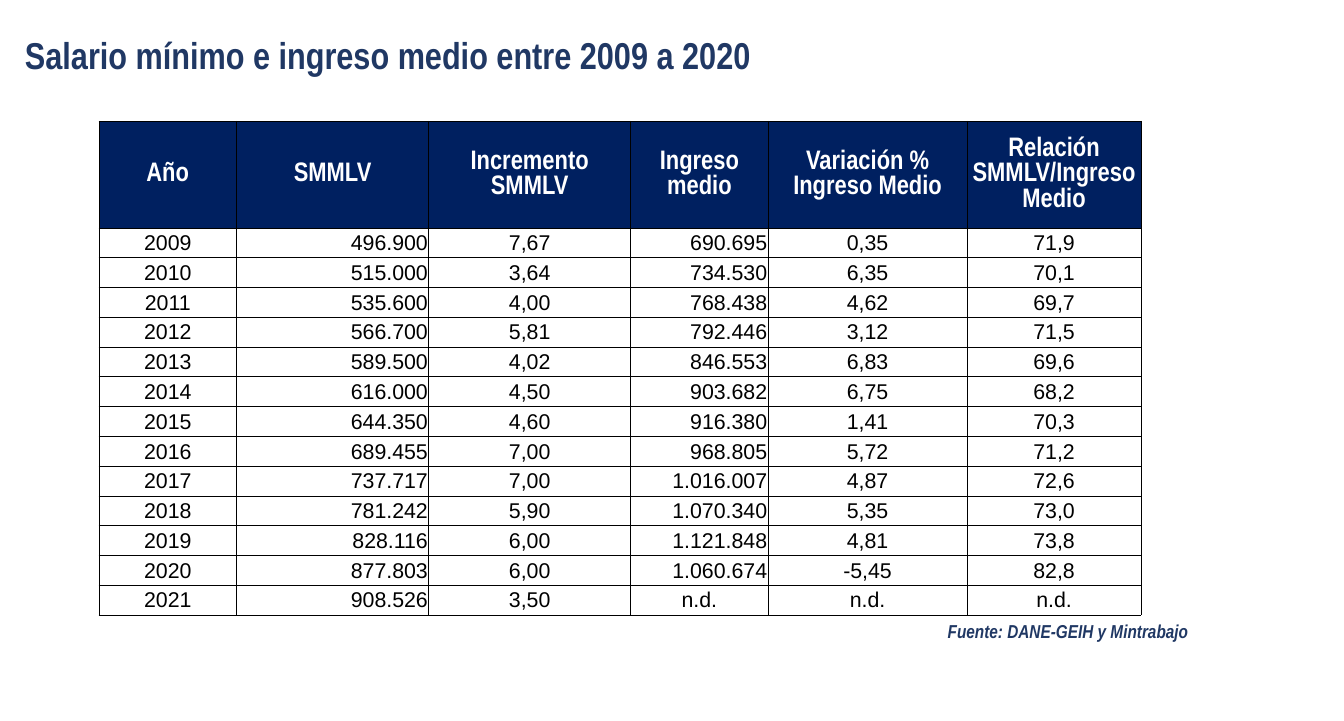
import pptx
import pptx.util
import pptx.dml.color
import pptx.enum.text
import pptx.oxml
import pptx.oxml.ns

Inches, Pt = pptx.util.Inches, pptx.util.Pt
RGB = pptx.dml.color.RGBColor
Align = pptx.enum.text.PP_ALIGN
Anchor = pptx.enum.text.MSO_ANCHOR
Fit = pptx.enum.text.MSO_AUTO_SIZE

TITLE = "Salario mínimo e ingreso medio entre 2009 a 2020"
SOURCE = "Fuente: DANE-GEIH y Mintrabajo"
HEADS = ("Año", "SMMLV", "Incremento SMMLV", "Ingreso medio",
         "Variación % Ingreso Medio", "Relación SMMLV/Ingreso Medio")
ROWS = (
    ("2009", "496.900", "7,67", "690.695", "0,35", "71,9"),
    ("2010", "515.000", "3,64", "734.530", "6,35", "70,1"),
    ("2011", "535.600", "4,00", "768.438", "4,62", "69,7"),
    ("2012", "566.700", "5,81", "792.446", "3,12", "71,5"),
    ("2013", "589.500", "4,02", "846.553", "6,83", "69,6"),
    ("2014", "616.000", "4,50", "903.682", "6,75", "68,2"),
    ("2015", "644.350", "4,60", "916.380", "1,41", "70,3"),
    ("2016", "689.455", "7,00", "968.805", "5,72", "71,2"),
    ("2017", "737.717", "7,00", "1.016.007", "4,87", "72,6"),
    ("2018", "781.242", "5,90", "1.070.340", "5,35", "73,0"),
    ("2019", "828.116", "6,00", "1.121.848", "4,81", "73,8"),
    ("2020", "877.803", "6,00", "1.060.674", "-5,45", "82,8"),
    ("2021", "908.526", "3,50", "n.d.", "n.d.", "n.d."),
)
WIDTHS = (1.43, 2, 2.1, 1.43, 2.07, 1.81)
HEAD_H, ROW_H = 1.11, 0.31
MONEY = (1, 3)  # columns of peso amounts, set to the right

NAVY = RGB(0x00, 0x20, 0x60)
BLUE = RGB(0x20, 0x38, 0x64)
WHITE = RGB(0xFF, 0xFF, 0xFF)
BLACK = RGB(0x00, 0x00, 0x00)
NARROW = "Arial Narrow"


def style(para, name, size, color, bold, align=Align.LEFT):
    para.alignment = align
    font = para.font
    font.name, font.size, font.bold = name, Pt(size), bold
    font.color.rgb = color


def border(cell):
    """Draw a thin black line on all four sides of a cell."""
    props = cell._tc.get_or_add_tcPr()
    for i, side in enumerate(("lnL", "lnR", "lnT", "lnB")):
        props.insert(i, pptx.oxml.parse_xml(
            f'<a:{side} {pptx.oxml.ns.nsdecls("a")} w="{Pt(0.5)}">'
            f'<a:solidFill><a:srgbClr val="{BLACK}"/></a:solidFill></a:{side}>'))


def fill(cell, text, back):
    cell.text = text
    cell.vertical_anchor = Anchor.MIDDLE
    cell.margin_left = cell.margin_right = cell.margin_top = Inches(0.01)
    cell.margin_bottom = 0
    cell.fill.solid()
    cell.fill.fore_color.rgb = back
    border(cell)
    return cell.text_frame.paragraphs[0]


deck = pptx.Presentation()
deck.slide_width, deck.slide_height = Inches(13.98), Inches(7.5)
slide = deck.slides.add_slide(deck.slide_layouts[5])

title = slide.shapes.title
title.left, title.top = Inches(0.16), Inches(0.28)
title.width, title.height = Inches(12.91), Inches(0.57)
frame = title.text_frame
frame.text = TITLE
frame.auto_size = Fit.NONE
frame.vertical_anchor = Anchor.MIDDLE
style(frame.paragraphs[0], NARROW, 28, BLUE, True)

note = slide.shapes.add_textbox(
    Inches(9.76), Inches(6.4), Inches(2.73), Inches(0.34)).text_frame
note.text = SOURCE
note.word_wrap = False
style(note.paragraphs[0], NARROW, 14, BLUE, True)
note.paragraphs[0].font.italic = True

table = slide.shapes.add_table(
    len(ROWS) + 1, len(HEADS), Inches(1.03), Inches(1.26),
    Inches(sum(WIDTHS)), Inches(HEAD_H + ROW_H * len(ROWS))).table
for col, width in zip(table.columns, WIDTHS):
    col.width = Inches(width)
for r, row in enumerate(table.rows):
    row.height = Inches(ROW_H if r else HEAD_H)

for c, text in enumerate(HEADS):
    para = fill(table.cell(0, c), text, NAVY)
    style(para, NARROW, 20, WHITE, True, Align.CENTER)
for r, row in enumerate(ROWS, 1):
    for c, text in enumerate(row):
        right = c in MONEY and text != "n.d."
        para = fill(table.cell(r, c), text, WHITE)
        style(para, "Arial", 16, BLACK, False,
              Align.RIGHT if right else Align.CENTER)

deck.save("out.pptx")
